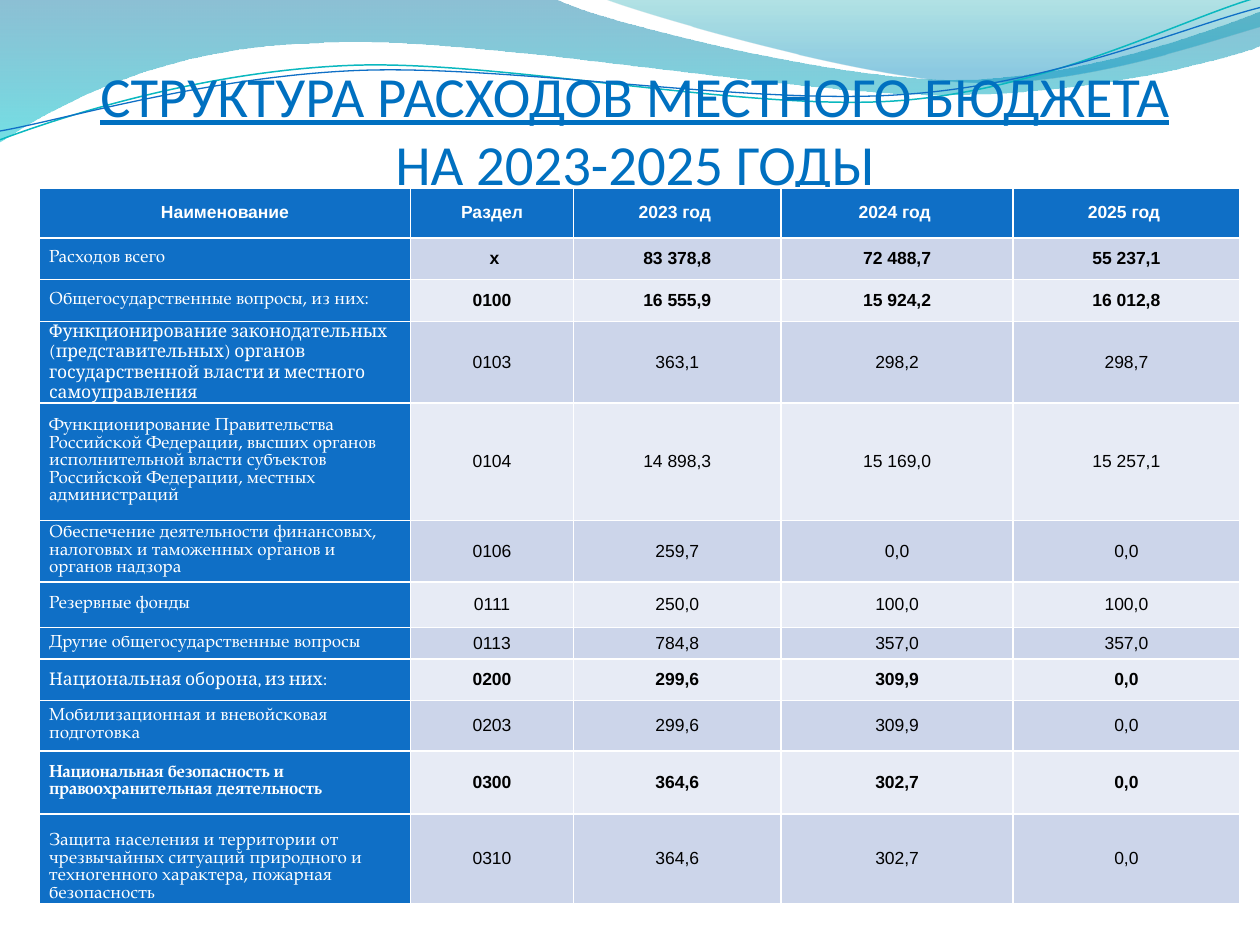
from lxml.etree import SubElement
from pptx import Presentation
from pptx.dml.color import RGBColor
from pptx.enum.text import MSO_ANCHOR, PP_ALIGN
from pptx.oxml.ns import qn
from pptx.util import Inches, Pt

COLORS = {
    "title": "0070C0", "head": "0F6FC6", "white": "FFFFFF", "black": "000000",
    "band_dark": "CCD5EA", "band_light": "E7EBF5", "teal_line": "0AB8BF",
    "deep_blue": "0074A1", "cyan": "00C6CF", "teal": "00A1A9", "blue": "008BBF",
}
PAGELLA, CAMBRIA, ARIAL = "TeX Gyre Pagella", "Cambria", "Arial"

COLUMN_WIDTHS = [2.95, 1.29, 1.65, 1.84, 1.8]
HEADER_HEIGHT = 0.4
HEADINGS = ["Наименование", "Раздел", "2023 год ", "2024 год ", "2025 год "]
# height, name, section, three yearly sums
EXPENSES = [
    (0.33, "Расходов всего", " х", "83 378,8", "72 488,7", "55 237,1"),
    (0.33, "Общегосударственные вопросы, из них:", "0100", "16 555,9", "15 924,2", "16 012,8"),
    (0.65, "Функционирование законодательных (представительных) органов государственной "
     "власти и местного самоуправления", "0103", "363,1", "298,2", "298,7"),
    (0.93, "Функционирование Правительства Российской Федерации, высших органов "
     "исполнительной власти субъектов Российской Федерации, местных администраций",
     "0104", "14 898,3", "15 169,0", "15 257,1"),
    (0.49, "Обеспечение деятельности финансовых, налоговых и таможенных органов и органов надзора",
     "0106", "259,7", "0,0", "0,0"),
    (0.36, "Резервные фонды", "0111", "250,0", "100,0", "100,0"),
    (0.25, "Другие общегосударственные вопросы", "0113", "784,8", "357,0", "357,0"),
    (0.33, "Национальная оборона, из них:", "0200", "299,6", "309,9", "0,0"),
    (0.4, "Мобилизационная и вневойсковая подготовка", "0203", "299,6", "309,9", "0,0"),
    (0.5, "Национальная безопасность и правоохранительная деятельность",
     "0300", "364,6", "302,7", "0,0"),
    (0.71, "Защита населения и территории от чрезвычайных ситуаций природного и "
     "техногенного характера, пожарная безопасность", "0310", "364,6", "302,7", "0,0"),
]
BOLD_SECTIONS = {" х", "0100", "0200", "0300"}
CAMBRIA_SECTIONS = {"0103", "0200"}

# A wave is a list of points (straight) and of point triples (Bezier curves).
LEFT_WAVE = [
    (0, 0), (4.4, -0.01), (4.76, 0.17, 6.64, 0.63, 7.58, 0.63),
    (8.53, 0.63, 9.58, 0.26, 10, 0.09), (10.01, 0.36),
    (9.83, 0.44, 8.7, 0.76, 7.46, 0.75), (6.22, 0.75, 3.82, 0.28, 2.57, 0.34),
    (1.29, 0.36, 0.46, 0.83, -0.01, 1.13), (0, 0)]
RIGHT_WAVE = [
    (4.79, -0.01), (5.09, 0.11, 6.82, 0.62, 7.69, 0.65),
    (8.56, 0.69, 9.61, 0.32, 10, 0.21), (10, 0), (4.79, -0.01)]
TEAL_CURVE = [
    (0, 1.11), (0.48, 0.93, 1.58, 0.57, 2.77, 0.52),
    (3.95, 0.47, 5.93, 0.89, 7.13, 0.8), (8.33, 0.71, 9.38, 0.15, 9.98, -0.02)]
BLUE_CURVE = [
    (0, 1.04), (0.47, 0.96, 1.64, 0.61, 2.83, 0.56),
    (4.03, 0.51, 5.97, 0.84, 7.17, 0.75), (8.36, 0.67, 9.41, 0.21, 10, 0.06)]


def color(name):
    return RGBColor.from_string(COLORS[name])


class SlideBuilder:
    def __init__(self, deck):
        self.page = deck.slides.add_slide(deck.slide_layouts[5])

    def outline(self, segments, closed):
        """Freeform whose point triples become Bezier curves."""
        points = [(Inches(segment[i]), Inches(segment[i + 1]))
                  for segment in segments for i in range(0, len(segment), 2)]
        builder = self.page.shapes.build_freeform(*points[0])
        builder.add_line_segments(points[1:], close=closed)
        shape = builder.convert_to_shape()
        shape.shadow.inherit = False
        lines = iter(list(shape._element.iter(qn("a:lnTo"))))
        for segment in segments[1:]:
            first = next(lines)
            if len(segment) == 6:
                bezier = SubElement(first.getparent(), qn("a:cubicBezTo"))
                first.addprevious(bezier)
                for line in (first, next(lines), next(lines)):
                    bezier.append(line[0])
                    line.getparent().remove(line)
        return shape

    def wave(self, segments, stops):
        """Filled wave; stops are (percent, colour name, opacity percent)."""
        shape = self.outline(segments, True)
        shape.line.fill.background()
        shape.fill.gradient()
        shape.fill.gradient_angle = 270
        stop_list = shape._element.spPr.find(qn("a:gradFill")).find(qn("a:gsLst"))
        for old_stop in list(stop_list):
            stop_list.remove(old_stop)
        for position, name, opacity in stops:
            stop = SubElement(stop_list, qn("a:gs"), pos=str(position * 1000))
            tint = SubElement(stop, qn("a:srgbClr"), val=COLORS[name])
            SubElement(tint, qn("a:alpha"), val=str(opacity * 1000))

    def curve(self, segments, name, width):
        shape = self.outline(segments, False)
        shape.fill.background()
        shape.line.color.rgb = color(name)
        shape.line.width = Pt(width)

    def title(self, text):
        box = self.page.shapes.title
        self.page.shapes._spTree.append(box._element)  # in front of the waves
        box.left, box.top, box.width, box.height = map(Inches, (0.5, 0.77, 9.08, 0.79))
        frame = box.text_frame
        frame.text = text
        frame.word_wrap = True
        frame.vertical_anchor = MSO_ANCHOR.BOTTOM
        frame.margin_left = frame.margin_right = frame.margin_bottom = 0
        frame.margin_top = Inches(0.05)
        para = frame.paragraphs[0]
        para.alignment = PP_ALIGN.CENTER
        para.font.name, para.font.size = "Calibri", Pt(32.4)
        para.font.underline = True
        para.font.color.rgb = color("title")

    def borders(self, cell):
        properties = cell._tc.get_or_add_tcPr()
        for index, side in enumerate(("lnL", "lnR", "lnT", "lnB")):
            line = SubElement(properties, qn("a:" + side), w=str(Pt(1)))
            fill = SubElement(line, qn("a:solidFill"))
            SubElement(fill, qn("a:srgbClr"), val=COLORS["white"])
            properties.insert(index, line)

    def cell(self, cell, text, fill, font=ARIAL, ink="black", bold=False, centred=True):
        cell.text = text
        cell.fill.solid()
        cell.fill.fore_color.rgb = color(fill)
        cell.vertical_anchor = MSO_ANCHOR.MIDDLE
        cell.margin_left = cell.margin_right = Inches(0.08)
        cell.margin_top = cell.margin_bottom = 0
        para = cell.text_frame.paragraphs[0]
        para.alignment = PP_ALIGN.CENTER if centred else PP_ALIGN.LEFT
        para.font.name, para.font.size, para.font.bold = font, Pt(10), bold
        para.font.color.rgb = color(ink)
        self.borders(cell)

    def expense_table(self):
        heights = [HEADER_HEIGHT] + [expense[0] for expense in EXPENSES]
        table = self.page.shapes.add_table(
            len(heights), len(COLUMN_WIDTHS), Inches(0.31), Inches(1.49),
            Inches(sum(COLUMN_WIDTHS)), Inches(sum(heights))).table
        for column, width in zip(table.columns, COLUMN_WIDTHS):
            column.width = Inches(width)
        for row, height in zip(table.rows, heights):
            row.height = Inches(height)
        for index, heading in enumerate(HEADINGS):
            self.cell(table.cell(0, index), heading, "head", ink="white", bold=True)
        for row, (_, name, section, *sums) in enumerate(EXPENSES, 1):
            font = CAMBRIA if section in CAMBRIA_SECTIONS else PAGELLA
            self.cell(table.cell(row, 0), name, "head", font, "white",
                      bold=section == "0300", centred=False)
            band = "band_dark" if row % 2 else "band_light"
            for index, value in enumerate([section, *sums], 1):
                self.cell(table.cell(row, index), value, band, bold=section in BOLD_SECTIONS)
        table.cell(len(EXPENSES), 0).margin_top = Inches(0.15)


def main():
    deck = Presentation()
    deck.slide_width, deck.slide_height = Inches(10), Inches(7.5)
    slide = SlideBuilder(deck)
    slide.wave(LEFT_WAVE, [(0, "deep_blue", 45), (100, "cyan", 55)])
    slide.wave(RIGHT_WAVE, [(0, "teal", 30), (80, "blue", 45)])
    slide.curve(TEAL_CURVE, "teal_line", 0.85)
    slide.curve(BLUE_CURVE, "head", 0.75)
    slide.title("СТРУКТУРА РАСХОДОВ МЕСТНОГО БЮДЖЕТА НА 2023-2025 ГОДЫ")
    slide.expense_table()
    deck.save("out.pptx")


if __name__ == "__main__":
    main()
